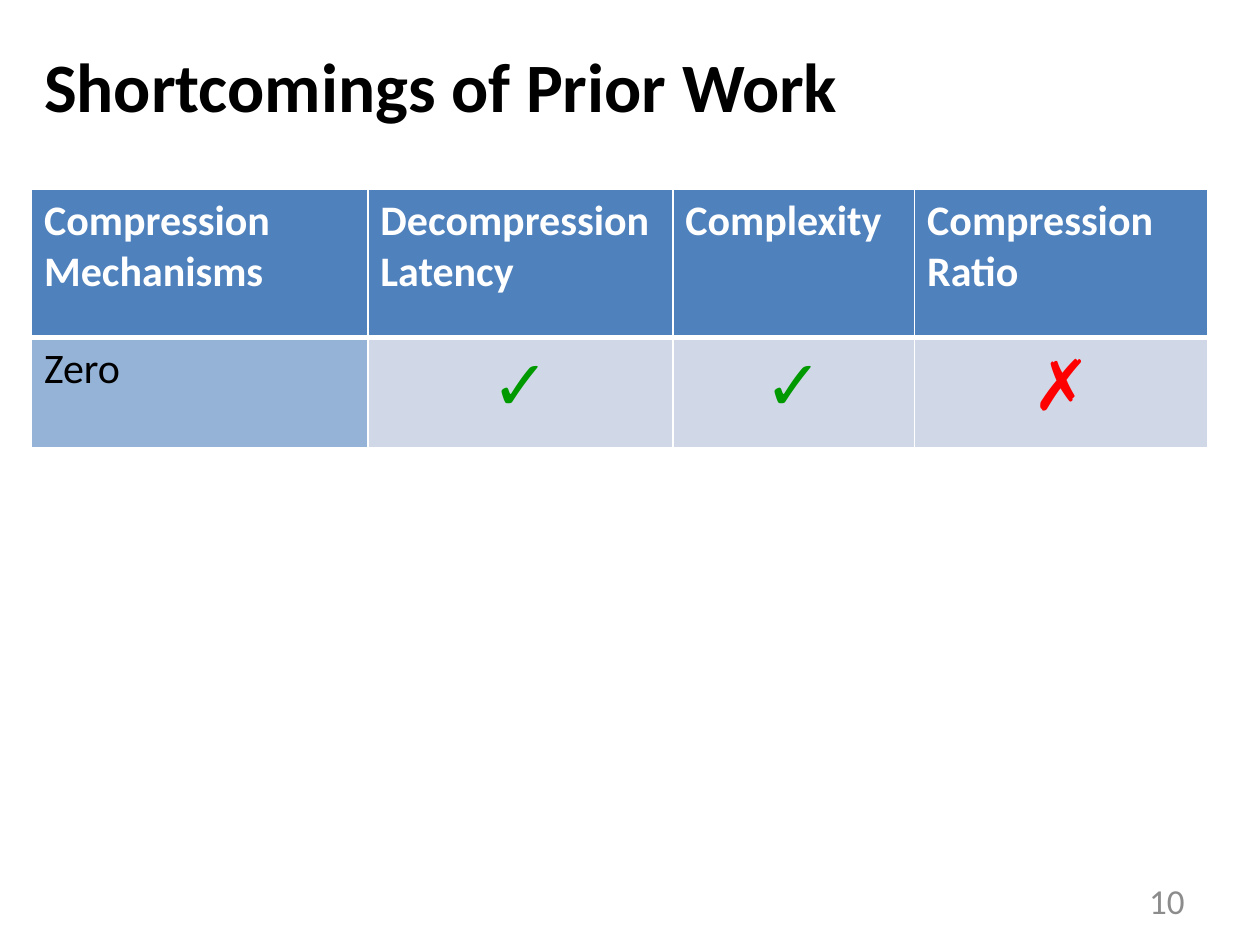
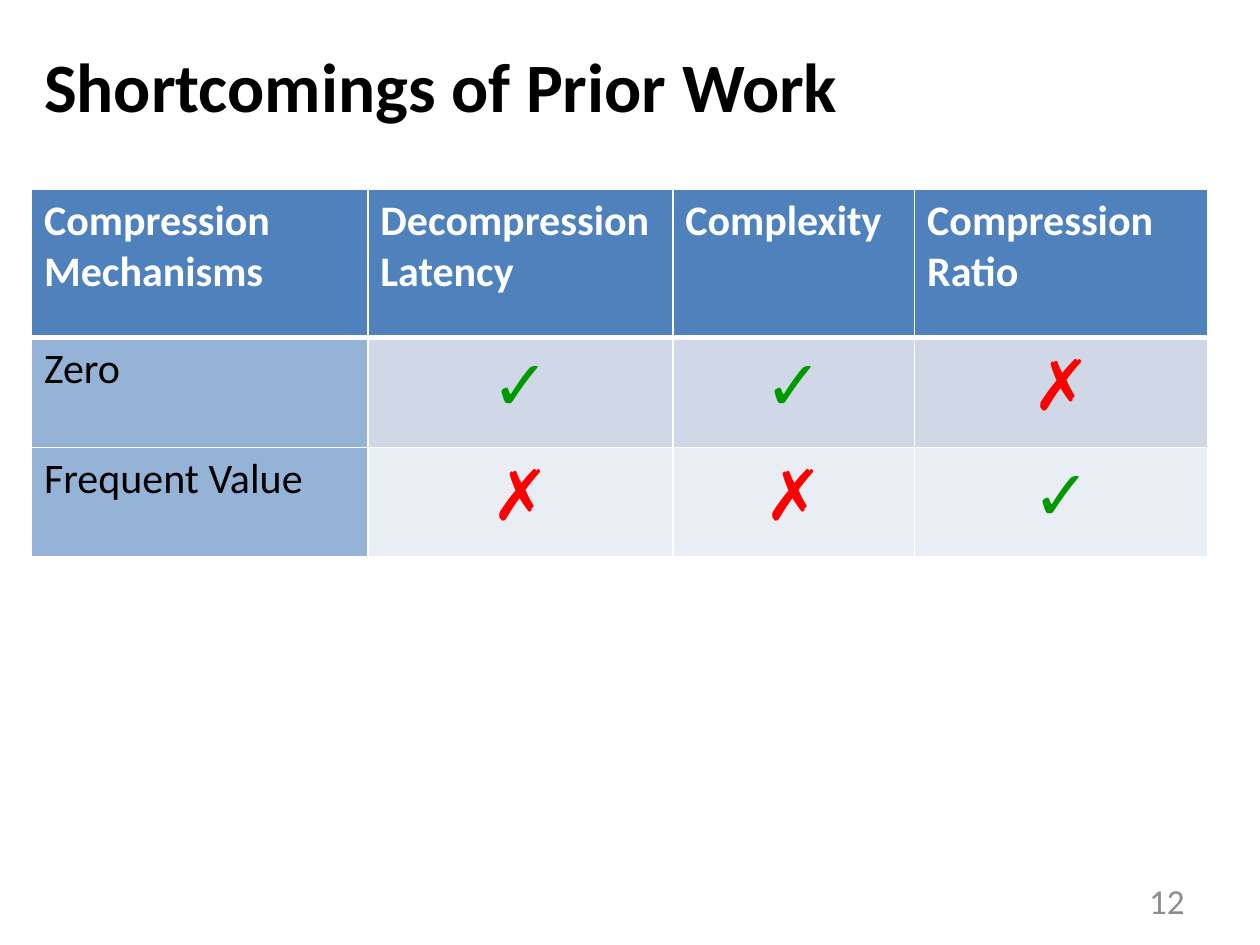
from typing import NamedTuple

from pptx import Presentation
from pptx.dml import color
from pptx.enum import text
from pptx.oxml import parse_xml
from pptx.oxml import ns
from pptx import util as u

FONT = "Calibri"
COLORS = {
    "black": "000000",
    "white": "FFFFFF",
    "number": "8C8C8C",
    "header": "4F81BD",
    "mechanism": "95B3D7",
    "band_odd": "D0D8E8",
    "band_even": "E9EDF4",
    "good": "009900",
    "bad": "FF0000",
}
TITLE = "Shortcomings of Prior Work"
HEADERS = (
    "Compression\nMechanisms",
    "Decompression\nLatency",
    "Complexity",
    "Compression\nRatio",
)
COLUMN_WIDTHS = (2.67, 2.42, 1.92, 2.33)
HEADER_HEIGHT, ROW_HEIGHT = 1.18, 0.87
THIN, THICK = 1, 3


class Mechanism(NamedTuple):
    name: str
    marks: str


class Page(NamedTuple):
    number: int
    mechanisms: tuple[Mechanism, ...]


class Style(NamedTuple):
    size: float
    color: str
    bold: bool = False
    align: text.PP_ALIGN = text.PP_ALIGN.LEFT


TITLE_STYLE = Style(39.6, "black", bold=True)
NUMBER_STYLE = Style(20, "number", align=text.PP_ALIGN.RIGHT)
HEADER_STYLE = Style(24, "white", bold=True)
NAME_STYLE = Style(24, "black")
MARK_STYLES = {
    "✓": Style(40, "good", align=text.PP_ALIGN.CENTER),
    "✗": Style(40, "bad", align=text.PP_ALIGN.CENTER),
}

ZERO = Mechanism("Zero", "✓✓✗")
FREQUENT_VALUE = Mechanism("Frequent Value", "✗✗✓")
PAGES = (
    Page(10, (ZERO,)),
    Page(12, (ZERO, FREQUENT_VALUE)),
)


def rgb(name: str) -> color.RGBColor:
    return color.RGBColor.from_string(COLORS[name])


def write(tf, content: str, style: Style) -> None:
    tf.text = content
    for p in tf.paragraphs:
        p.alignment = style.align
        p.font.name = FONT
        p.font.size = u.Pt(style.size)
        p.font.bold = style.bold
        p.font.color.rgb = rgb(style.color)


def set_borders(cell, top: int, bottom: int) -> None:
    tc_pr = cell._tc.get_or_add_tcPr()
    for side, width in (("L", THIN), ("R", THIN), ("T", top), ("B", bottom)):
        tc_pr.append(parse_xml(
            f'<a:ln{side} {ns.nsdecls("a")} w="{u.Pt(width)}"><a:solidFill>'
            f'<a:srgbClr val="{COLORS["white"]}"/></a:solidFill></a:ln{side}>'
        ))


def fill_cell(cell, content: str, style: Style, fill: str,
              top: int = THIN, bottom: int = THIN) -> None:
    write(cell.text_frame, content, style)
    set_borders(cell, top, bottom)
    cell.fill.solid()
    cell.fill.fore_color.rgb = rgb(fill)


def add_title(s) -> None:
    sp = s.shapes.title
    sp.left, sp.top = u.Inches(0.25), u.Inches(0.26)
    sp.width, sp.height = u.Inches(9.42), u.Inches(0.83)
    tf = sp.text_frame
    tf.auto_size = text.MSO_AUTO_SIZE.NONE
    tf.vertical_anchor = text.MSO_ANCHOR.MIDDLE
    write(tf, TITLE, TITLE_STYLE)


def add_number(s, number: int) -> None:
    sp = s.shapes.add_textbox(
        u.Inches(7.17), u.Inches(6.95), u.Inches(2.33), u.Inches(0.4))
    tf = sp.text_frame
    tf.word_wrap = True
    tf.vertical_anchor = text.MSO_ANCHOR.MIDDLE
    write(tf, str(number), NUMBER_STYLE)


def add_comparison(s, mechanisms: tuple[Mechanism, ...]) -> None:
    heights = [HEADER_HEIGHT] + [ROW_HEIGHT] * len(mechanisms)
    table = s.shapes.add_table(
        len(heights), len(HEADERS), u.Inches(0.25), u.Inches(1.5),
        u.Inches(sum(COLUMN_WIDTHS)), u.Inches(sum(heights))).table
    for column, width in zip(table.columns, COLUMN_WIDTHS):
        column.width = u.Inches(width)
    for row, height in zip(table.rows, heights):
        row.height = u.Inches(height)
    for i, header in enumerate(HEADERS):
        fill_cell(table.cell(0, i), header, HEADER_STYLE, "header", bottom=THICK)
    for i, mechanism in enumerate(mechanisms, start=1):
        top = THICK if i == 1 else THIN
        band = "band_odd" if i % 2 else "band_even"
        fill_cell(table.cell(i, 0), mechanism.name, NAME_STYLE, "mechanism", top)
        for j, mark in enumerate(mechanism.marks, start=1):
            fill_cell(table.cell(i, j), mark, MARK_STYLES[mark], band, top)


def main() -> None:
    prs = Presentation()
    prs.slide_width, prs.slide_height = u.Inches(10), u.Inches(7.5)
    title_only = prs.slide_layouts.get_by_name("Title Only")
    for page in PAGES:
        s = prs.slides.add_slide(title_only)
        add_title(s)
        add_number(s, page.number)
        add_comparison(s, page.mechanisms)
    prs.save("out.pptx")


if __name__ == "__main__":
    main()
